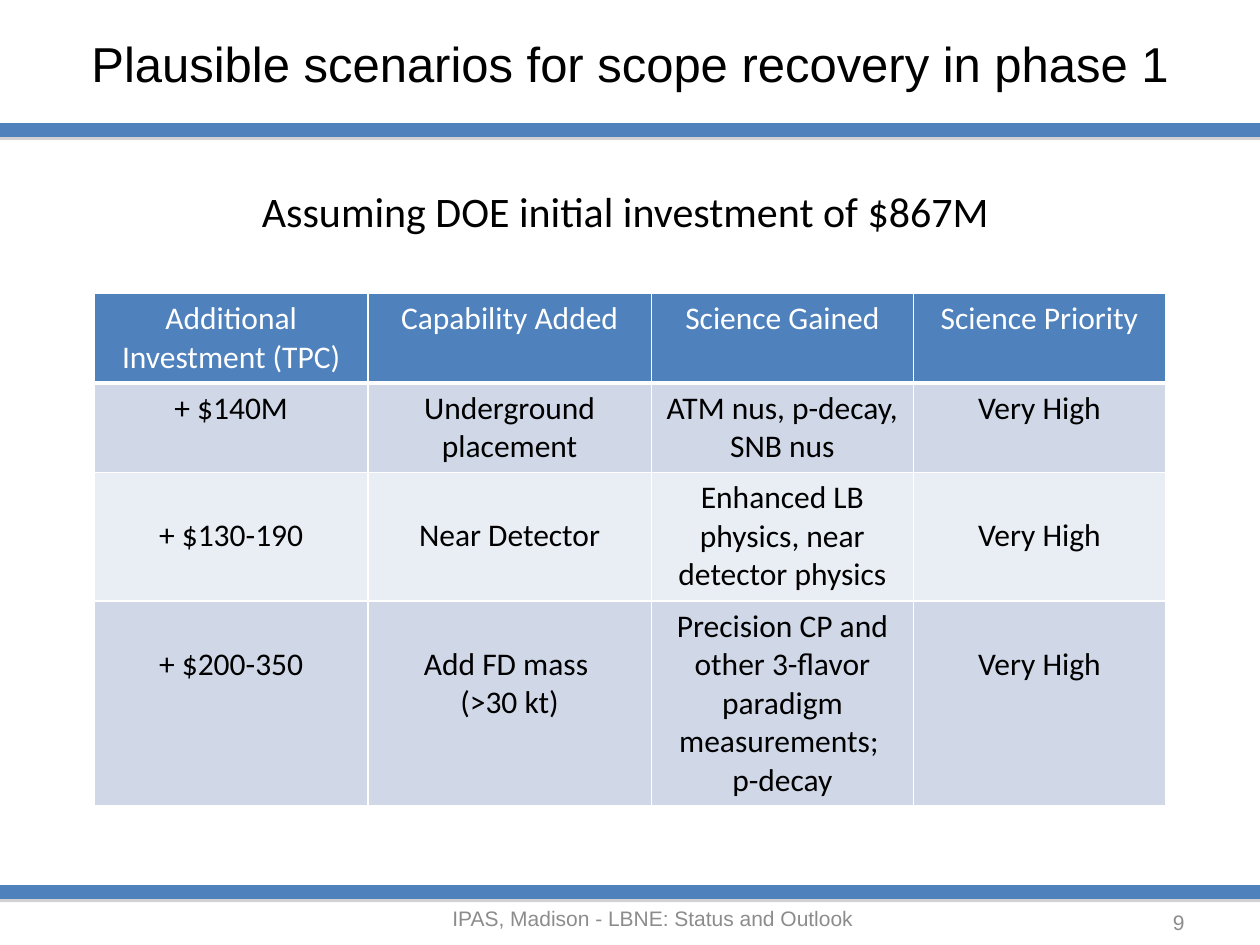
from lxml import etree
from pptx import Presentation
from pptx.dml.color import RGBColor
from pptx.enum.shapes import MSO_CONNECTOR
from pptx.enum.text import MSO_ANCHOR, PP_ALIGN
from pptx.oxml import parse_xml
from pptx.oxml.ns import nsdecls, qn
from pptx.util import Inches, Pt

CENTER, LEFT, RIGHT = PP_ALIGN.CENTER, PP_ALIGN.LEFT, PP_ALIGN.RIGHT
TOP, MIDDLE = MSO_ANCHOR.TOP, MSO_ANCHOR.MIDDLE
BLUE = RGBColor(0x4F, 0x81, 0xBD)
DARK_BAND = RGBColor(0xD0, 0xD8, 0xE8)
LIGHT_BAND = RGBColor(0xE9, 0xED, 0xF4)
GRAY = RGBColor(0x8C, 0x8C, 0x8C)
BLACK = RGBColor(0, 0, 0)
WHITE = RGBColor(255, 255, 255)

SLIDE_WIDTH, SLIDE_HEIGHT = 10, 7.5
RULE_HEIGHTS = [1.03, 7.08]

# text, (left, top, width, height), font, size, colour, alignment, anchor, wrap
TEXTS = [
    ("Plausible scenarios for scope recovery in phase 1",
     (0.5, 0.05, 9, 0.9), "Arial", 28, BLACK, CENTER, MIDDLE, True),
    ("Assuming DOE initial investment of $867M",
     (1.98, 1.42, 6.04, 0.5), "Calibri", 24, BLACK, LEFT, TOP, False),
    ("IPAS, Madison - LBNE: Status and Outlook ",
     (2.66, 7.08, 5.09, 0.42), "Arial", 12, GRAY, CENTER, MIDDLE, True),
    ("9", (7.92, 7.17, 1.58, 0.3), "Arial", 12, GRAY, RIGHT, MIDDLE, True),
]

SCENARIOS = [
    ["Additional Investment (TPC)", "Capability Added", "Science Gained",
     "Science Priority"],
    ["+ $140M", "Underground placement", "ATM nus, p-decay, SNB nus",
     "Very High"],
    ["+ $130-190", "Near Detector",
     "Enhanced LB physics, near detector physics", "Very High"],
    ["+ $200-350", "Add FD mass \v(>30 kt)",
     "Precision CP and other 3-flavor paradigm measurements; \np-decay",
     "Very High"],
]
TABLE_LEFT, TABLE_TOP = 0.75, 2.33
COLUMN_WIDTHS = [2.17, 2.25, 2.08, 2]
ROW_HEIGHTS = [0.7, 0.71, 1.02, 1.62]
SCIENCE_COLUMN = 2
FIRST_LOWERED_ROW = 2  # from here on, short entries start one line lower
CELL_MARGIN, LINE_HEIGHT = 0.05, 0.3


def style_paragraph(paragraph, font_name, size, color, alignment):
    paragraph.alignment = alignment
    font = paragraph.font
    font.name, font.size, font.bold = font_name, Pt(size), False
    font.color.rgb = color


def add_text(slide, text, box, font_name, size, color, alignment, anchor, wrap):
    frame = slide.shapes.add_textbox(*map(Inches, box)).text_frame
    frame.word_wrap = wrap
    frame.vertical_anchor = anchor
    frame.text = text
    style_paragraph(frame.paragraphs[0], font_name, size, color, alignment)


def add_rule(slide, y):
    """Draw a full-width blue line with a small shadow below it."""
    rule = slide.shapes.add_connector(
        MSO_CONNECTOR.STRAIGHT, 0, Inches(y), Inches(SLIDE_WIDTH), Inches(y))
    rule.line.color.rgb = BLUE
    rule.line.width = Pt(8)
    rule._element.spPr.append(parse_xml(
        f'<a:effectLst {nsdecls("a")}>'
        f'<a:outerShdw blurRad="0" dist="{Pt(1.8)}" dir="5400000" rotWithShape="0">'
        '<a:srgbClr val="808080"><a:alpha val="35000"/></a:srgbClr>'
        '</a:outerShdw></a:effectLst>'))


def set_borders(cell, bottom_width):
    properties = cell._tc.get_or_add_tcPr()
    widths = {"a:lnL": 1, "a:lnR": 1, "a:lnT": 1, "a:lnB": bottom_width}
    for position, (tag, width) in enumerate(widths.items()):
        border = etree.Element(qn(tag), w=str(Pt(width)))
        fill = etree.SubElement(border, qn("a:solidFill"))
        etree.SubElement(fill, qn("a:srgbClr"), val=str(WHITE))
        properties.insert(position, border)


def add_scenario_table(slide):
    table = slide.shapes.add_table(
        len(ROW_HEIGHTS), len(COLUMN_WIDTHS), Inches(TABLE_LEFT),
        Inches(TABLE_TOP), Inches(sum(COLUMN_WIDTHS)),
        Inches(sum(ROW_HEIGHTS))).table
    for column, width in zip(table.columns, COLUMN_WIDTHS):
        column.width = Inches(width)
    for r, (entries, height) in enumerate(zip(SCENARIOS, ROW_HEIGHTS)):
        table.rows[r].height = Inches(height)
        is_header = r == 0
        band = BLUE if is_header else DARK_BAND if r % 2 else LIGHT_BAND
        for c, entry in enumerate(entries):
            cell = table.cell(r, c)
            cell.text = entry
            lowered = r >= FIRST_LOWERED_ROW and c != SCIENCE_COLUMN
            cell.margin_top = Inches(CELL_MARGIN + LINE_HEIGHT * lowered)
            cell.fill.solid()
            cell.fill.fore_color.rgb = band
            set_borders(cell, 3 if is_header else 1)
            for paragraph in cell.text_frame.paragraphs:
                style_paragraph(paragraph, "Calibri", 18,
                                WHITE if is_header else BLACK, CENTER)


def main():
    presentation = Presentation()
    presentation.slide_width = Inches(SLIDE_WIDTH)
    presentation.slide_height = Inches(SLIDE_HEIGHT)
    slide = presentation.slides.add_slide(presentation.slide_layouts[6])
    for y in RULE_HEIGHTS:
        add_rule(slide, y)
    add_scenario_table(slide)
    for text in TEXTS:
        add_text(slide, *text)
    presentation.save("out.pptx")


if __name__ == "__main__":
    main()
